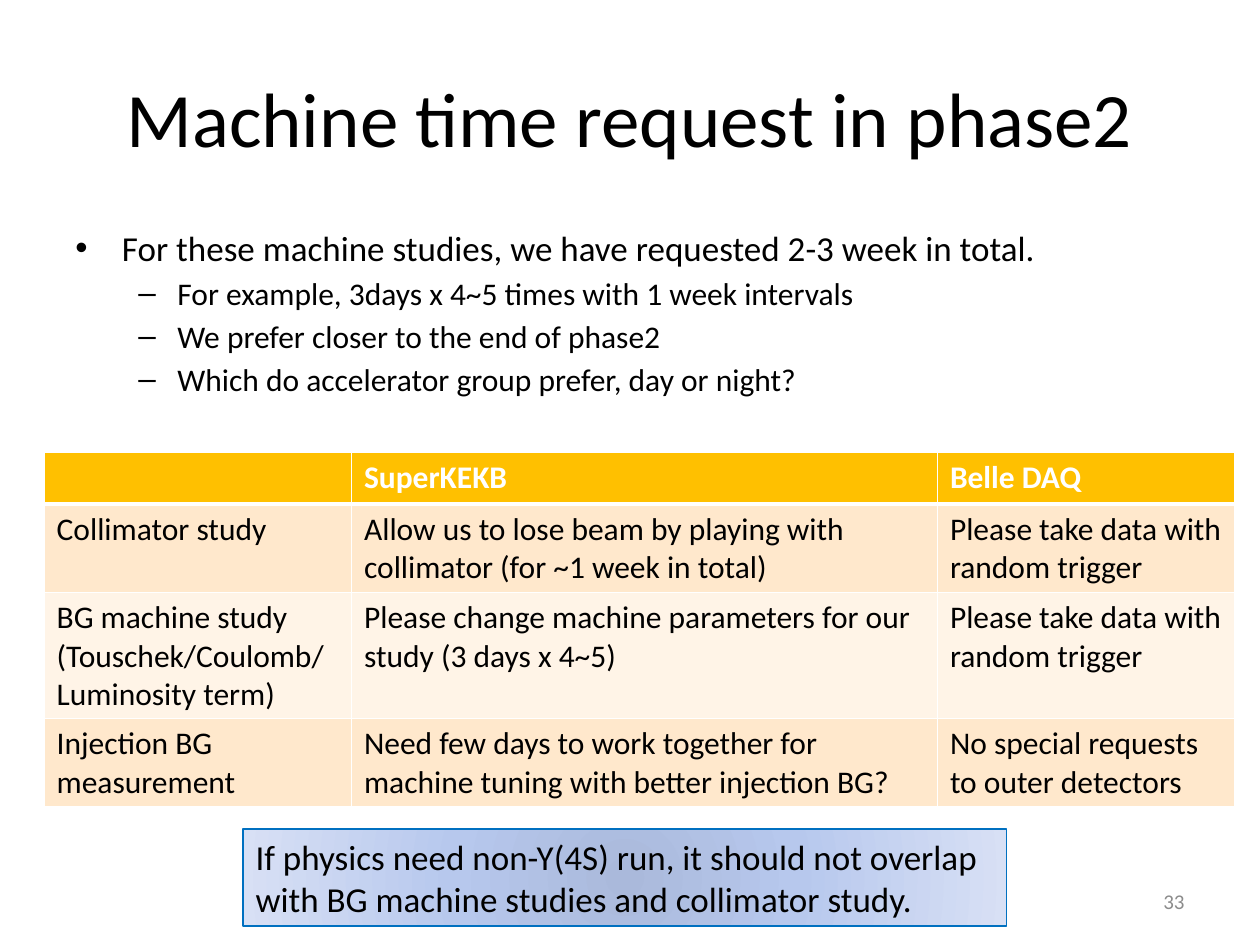
from lxml import etree
from pptx import Presentation
from pptx.dml.color import RGBColor as RGB
from pptx.enum.shapes import MSO_SHAPE as Shape
from pptx.enum.text import MSO_ANCHOR as Anchor, PP_ALIGN as Align
from pptx.oxml import parse_xml
from pptx.oxml.ns import nsdecls, qn
from pptx.util import Inches, Pt

BLACK = RGB(0x00, 0x00, 0x00)
WHITE = RGB(0xFF, 0xFF, 0xFF)
GRAY = RGB(0x8C, 0x8C, 0x8C)
GOLD = RGB(0xFF, 0xC0, 0x00)
PEACH = RGB(0xFF, 0xE8, 0xCC)
CREAM = RGB(0xFF, 0xF4, 0xE7)
BLUE = RGB(0x00, 0x70, 0xC0)
GLOW = [(0, RGB(0xAA, 0xB9, 0xDB)), (45, RGB(0xB7, 0xC8, 0xED)),
        (100, RGB(0xD8, 0xE0, 0xF5))]

POINTS = [
    (0, "For these machine studies, we have requested 2-3 week in total."),
    (1, "For example, 3days x 4~5 times with 1 week intervals"),
    (1, "We prefer closer to the end of phase2"),
    (1, "Which do accelerator group prefer, day or night?"),
]
# Per level: bullet, size, left margin, hanging indent, space before
LEVELS = [("•", 20, 0.37, 0.37, 0), ("–", 18, 0.81, 0.31, 3)]

WIDTHS = [2.44, 4.65, 2.36]
HEIGHTS = [0.41, 0.7, 1, 0.7]
ROWS = [
    ["", "SuperKEKB", "Belle DAQ"],
    ["Collimator study",
     "Allow us to lose beam by playing with collimator (for ~1 week in total)",
     "Please take data with random trigger"],
    ["BG machine study\n(Touschek/Coulomb/Luminosity term)",
     "Please change machine parameters for our study (3 days x 4~5)",
     "Please take data with random trigger"],
    ["Injection BG measurement",
     "Need few days to work together for machine tuning with better injection BG?",
     "No special requests to outer detectors"],
]
NOTE = ("If physics need non-Y(4S) run, it should not overlap "
        "with BG machine studies and collimator study.")


def style(para, size, color=BLACK, bold=False, align=Align.LEFT):
    font = para.font
    font.name, font.size, font.bold = "Calibri", Pt(size), bold
    font.color.rgb = color
    para.alignment = align


def add_text(slide, box, text, size, color, align):
    frame = slide.shapes.add_textbox(*map(Inches, box)).text_frame
    frame.word_wrap = True
    frame.vertical_anchor = Anchor.MIDDLE
    frame.text = text
    style(frame.paragraphs[0], size, color, align=align)


def add_list(slide, box, points):
    frame = slide.shapes.add_textbox(*map(Inches, box)).text_frame
    frame.word_wrap = True
    frame.text = "\n".join(text for _, text in points)
    for para, (level, _) in zip(frame.paragraphs, points):
        mark, size, left, hang, gap = LEVELS[level]
        style(para, size)
        para.level = level
        para.space_before = Pt(gap)
        props = para._p.get_or_add_pPr()
        props.set("marL", str(Inches(left)))
        props.set("indent", str(-Inches(hang)))
        font = etree.SubElement(props, qn("a:buFont"), typeface="Arial")
        font.addnext(props.makeelement(qn("a:buChar"), {"char": mark}))
        # Default run properties come after the bullet in the schema
        props.append(props.find(qn("a:defRPr")))


def add_edges(cell, head, below):
    props = cell._tc.get_or_add_tcPr()
    widths = {"L": 1, "R": 1, "T": 3 if below else 1, "B": 3 if head else 1}
    for spot, (side, width) in enumerate(widths.items()):
        props.insert(spot, parse_xml(
            f'<a:ln{side} {nsdecls("a")} w="{Pt(width)}"><a:solidFill>'
            f'<a:srgbClr val="{WHITE}"/></a:solidFill></a:ln{side}>'))


def add_grid(slide, left, top):
    table = slide.shapes.add_table(
        len(ROWS), len(WIDTHS), Inches(left), Inches(top),
        Inches(sum(WIDTHS)), Inches(sum(HEIGHTS))).table
    for col, width in zip(table.columns, WIDTHS):
        col.width = Inches(width)
    for r, (texts, height) in enumerate(zip(ROWS, HEIGHTS)):
        table.rows[r].height = Inches(height)
        head = r == 0
        fill = GOLD if head else PEACH if r % 2 else CREAM
        for c, text in enumerate(texts):
            cell = table.cell(r, c)
            cell.text = text
            cell.fill.solid()
            cell.fill.fore_color.rgb = fill
            for para in cell.text_frame.paragraphs:
                style(para, 18, WHITE if head else BLACK, head)
            add_edges(cell, head, r == 1)


def add_note(slide, box, text):
    shape = slide.shapes.add_shape(Shape.RECTANGLE, *map(Inches, box))
    shape.shadow.inherit = False
    shape.line.color.rgb = BLUE
    shape.line.width = Pt(0.75)
    # Radial gradient from the centre outwards
    stops = "".join(f'<a:gs pos="{pos * 1000}"><a:srgbClr val="{color}"/></a:gs>'
                    for pos, color in GLOW)
    shape.fill.background()
    props = shape._element.spPr
    props.replace(props.find(qn("a:noFill")), parse_xml(
        f'<a:gradFill {nsdecls("a")}><a:gsLst>{stops}</a:gsLst>'
        '<a:path path="circle"><a:fillToRect l="50000" t="50000" '
        'r="50000" b="50000"/></a:path></a:gradFill>'))
    frame = shape.text_frame
    frame.word_wrap = True
    frame.vertical_anchor = Anchor.TOP
    frame.text = text
    style(frame.paragraphs[0], 20)


def main():
    deck = Presentation()
    deck.slide_width, deck.slide_height = Inches(10), Inches(7.5)
    slide = deck.slides.add_slide(deck.slide_layouts[6])

    # Title and bullets
    add_text(slide, (0.5, 0.3, 9, 1.25), "Machine time request in phase2",
             44, BLACK, Align.CENTER)
    add_list(slide, (0.5, 1.75, 9, 1.7), POINTS)

    # Requests table and note
    add_grid(slide, 0.35, 3.59)
    add_note(slide, (1.93, 6.58, 6.06, 0.77), NOTE)

    # Page number
    add_text(slide, (7.17, 6.95, 2.33, 0.4), "33", 12, GRAY, Align.RIGHT)
    deck.save("out.pptx")


if __name__ == "__main__":
    main()
